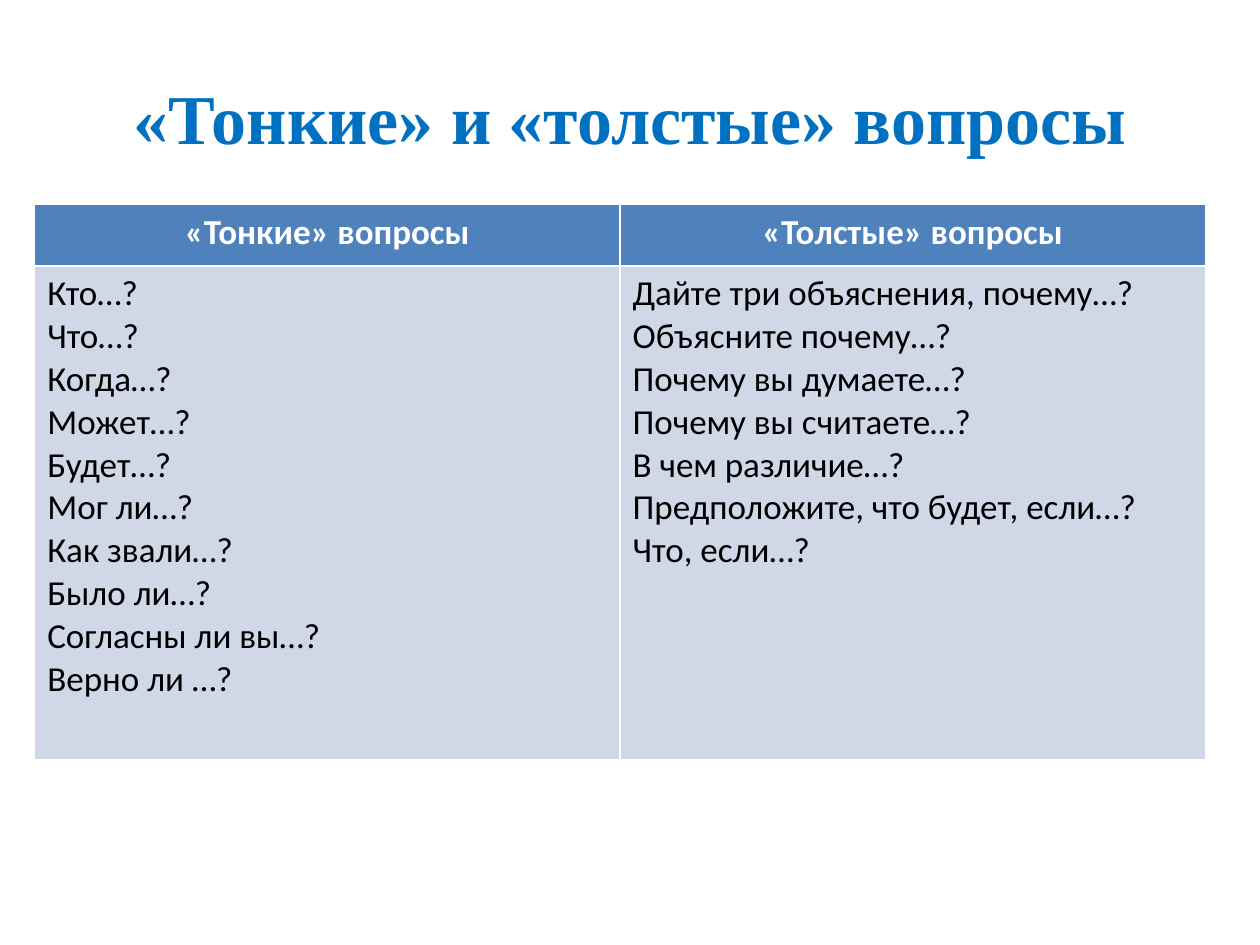
from pptx import Presentation
from pptx.dml.color import RGBColor
from pptx.enum.text import MSO_ANCHOR as ANCHOR, PP_ALIGN as ALIGN
from pptx.util import Cm, Pt

THIN = ["Кто…?", "Что…?", "Когда…?", "Может…?", "Будет…?", "Мог ли…?",
        "Как звали…?", "Было ли…?", "Согласны ли вы…?", "Верно ли …?"]
THICK = ["Дайте три объяснения, почему…?", "Объясните почему…?",
         "Почему вы думаете…?", "Почему вы считаете…?", "В чем различие…?",
         "Предположите, что будет, если…?", "Что, если…?"]


def color(value):
    return RGBColor.from_string(value)


def write(tf, lines, size=20, font="Calibri", fill="000000", bold=False,
          align=ALIGN.LEFT):
    for i, line in enumerate(lines):
        p = tf.paragraphs[0] if i == 0 else tf.add_paragraph()
        p.alignment = align
        r = p.add_run()
        r.text = line
        r.font.size = Pt(size)
        r.font.name = font
        r.font.bold = bold
        r.font.color.rgb = color(fill)


class Deck:
    title_fill = "0070C0"
    head_fill = "4F81BD"
    body_fill = "D0D8E8"

    def __init__(self, width, height):
        self.prs = Presentation()
        self.prs.slide_width = Cm(width)
        self.prs.slide_height = Cm(height)
        self.s = self.prs.slides.add_slide(self.prs.slide_layouts[6])

    def title(self, text, left, top, width, height):
        sp = self.s.shapes.add_textbox(Cm(left), Cm(top), Cm(width), Cm(height))
        tf = sp.text_frame
        tf.word_wrap = True
        tf.vertical_anchor = ANCHOR.MIDDLE
        write(tf, [text], size=40, font="Times New Roman",
              fill=self.title_fill, bold=True, align=ALIGN.CENTER)

    def table(self, columns, left, top, width, heights):
        table = self.s.shapes.add_table(
            len(heights), len(columns), Cm(left), Cm(top),
            Cm(width), Cm(sum(heights))).table
        for row, height in zip(table.rows, heights):
            row.height = Cm(height)
        for i, (head, lines) in enumerate(columns):
            self.cell(table.cell(0, i), [head], self.head_fill,
                      fill="FFFFFF", bold=True, align=ALIGN.CENTER)
            self.cell(table.cell(1, i), lines, self.body_fill)

    def cell(self, cell, lines, background, **style):
        cell.fill.solid()
        cell.fill.fore_color.rgb = color(background)
        write(cell.text_frame, lines, **style)


def main():
    deck = Deck(25.4, 19.05)
    deck.title("«Тонкие» и «толстые» вопросы", 1.27, 0.76, 22.86, 3.18)
    deck.table([("«Тонкие» вопросы", THIN), ("«Толстые» вопросы", THICK)],
               0.7, 4.12, 23.6, [1.24, 9.96])
    deck.prs.save("out.pptx")


if __name__ == "__main__":
    main()
